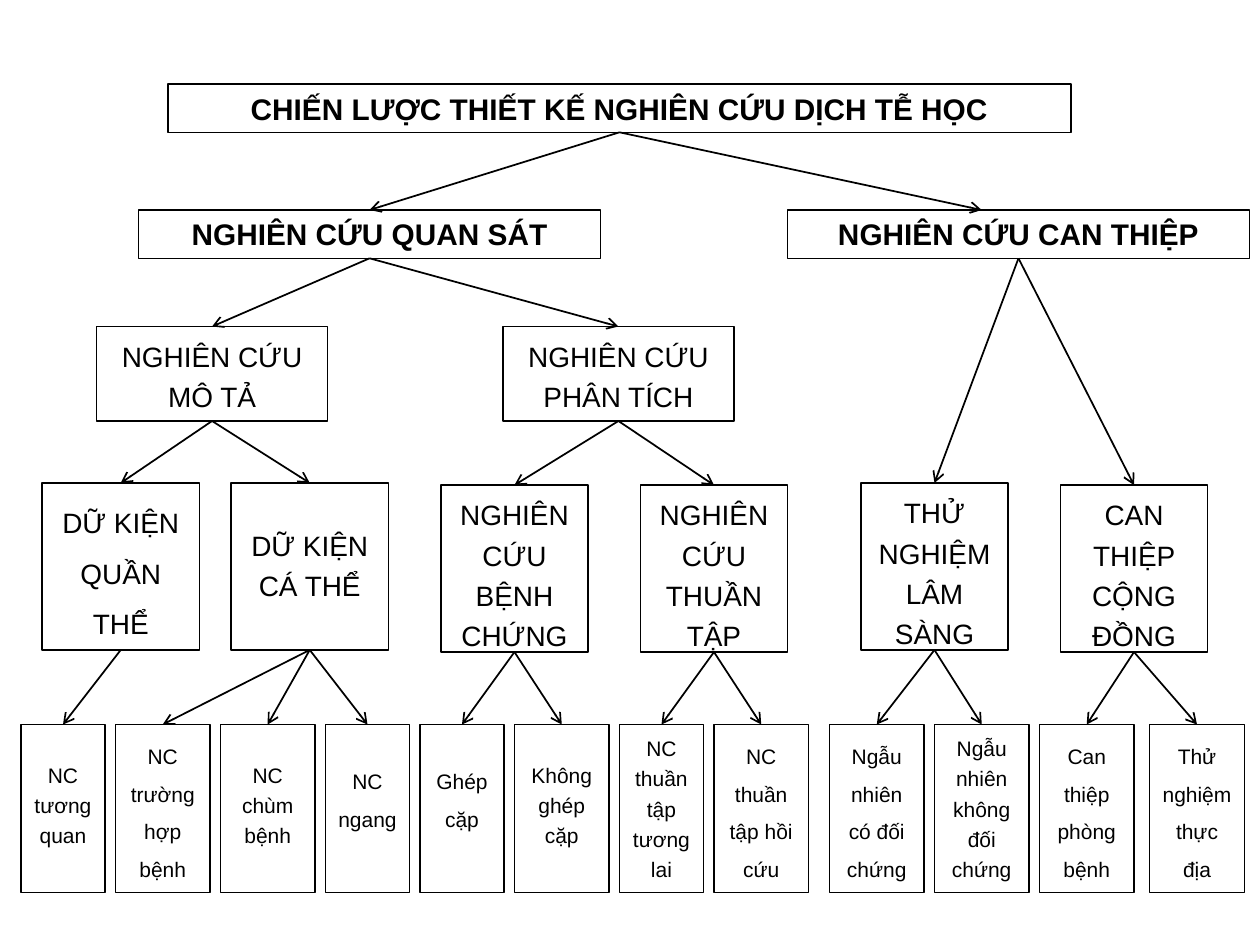
from dataclasses import dataclass
from lxml.etree import SubElement
from pptx import Presentation
from pptx.dml.color import RGBColor
from pptx.enum.shapes import MSO_CONNECTOR, MSO_SHAPE
from pptx.enum.text import MSO_ANCHOR, MSO_AUTO_SIZE, PP_ALIGN
from pptx.oxml.ns import qn
from pptx.util import Inches, Pt


@dataclass(frozen=True)
class Theme:
    ink: RGBColor = RGBColor(0, 0, 0)
    font: str = "Arial"
    head: float = 17
    body: float = 16
    leaf: float = 12
    edge: float = 0.75
    link: float = 1


@dataclass(frozen=True)
class Tier:
    row: float
    tall: float
    size: float
    bold: bool = False


@dataclass(frozen=True)
class Node:
    text: str
    tier: Tier
    col: float
    wide: float
    lead: float = 1.2
    skip: float = 0
    drop: float = 0
    entry: float | None = None
    kids: tuple = ()

    @property
    def mid(self) -> float:
        return self.col + self.wide / 2

    @property
    def top(self) -> float:
        return self.tier.row + self.drop

    @property
    def base(self) -> float:
        return self.top + self.tier.tall


COLS, ROWS = 120, 90
INSET = 0.05
LOOK = Theme()
ROOT = Tier(8, 4.6, LOOK.head, True)
KIND = Tier(20, 4.6, LOOK.head, True)
FORM = Tier(31.1, 9, LOOK.body)
UNIT = Tier(46, 15.9, LOOK.body)
LEAF = Tier(69, 16, LOOK.leaf)

TREE = Node("CHIẾN LƯỢC THIẾT KẾ NGHIÊN CỨU DỊCH TỄ HỌC", ROOT, 16, 86, 1, kids=(
    Node("NGHIÊN CỨU QUAN SÁT", KIND, 13.2, 44, 1, kids=(
        Node("NGHIÊN CỨU MÔ TẢ", FORM, 9.2, 22, kids=(
            Node("DỮ KIỆN QUẦN THỂ", UNIT, 4, 15, 1.5, kids=(
                Node("NC tương quan", LEAF, 2, 8, skip=0.21),)),
            Node("DỮ KIỆN CÁ THỂ", UNIT, 22, 15, skip=0.26, kids=(
                Node("NC trường hợp bệnh", LEAF, 11, 9, 1.5),
                Node("NC chùm bệnh", LEAF, 21, 9, skip=0.21),
                Node("NC ngang", LEAF, 31, 8, 1.5, 0.2))))),
        Node("NGHIÊN CỨU PHÂN TÍCH", FORM, 47.9, 22, kids=(
            Node("NGHIÊN CỨU BỆNH CHỨNG", UNIT, 42, 14, drop=0.2, kids=(
                Node("Ghép cặp", LEAF, 40, 8, 1.5, 0.2),
                Node("Không ghép cặp", LEAF, 49, 9, skip=0.21))),
            Node("NGHIÊN CỨU THUẦN TẬP", UNIT, 61, 14, drop=0.2, kids=(
                Node("NC thuần tập tương lai", LEAF, 59, 8),
                Node("NC thuần tập hồi cứu", LEAF, 68, 9, 1.5))))))),
    Node("NGHIÊN CỨU CAN THIỆP", KIND, 75, 44, 1, entry=93.5, kids=(
        Node("THỬ NGHIỆM LÂM SÀNG", UNIT, 82, 14, kids=(
            Node("Ngẫu nhiên có đối chứng", LEAF, 79, 9, 1.5),
            Node("Ngẫu nhiên không đối chứng", LEAF, 89, 9))),
        Node("CAN THIỆP CỘNG ĐỒNG", UNIT, 101, 14, drop=0.2, kids=(
            Node("Can thiệp phòng bệnh", LEAF, 99, 9, 1.5),
            Node("Thử nghiệm thực địa", LEAF, 109.5, 9, 1.5)))))))

deck = Presentation()
deck.slide_width, deck.slide_height = Inches(10), Inches(7.5)
slide = deck.slides.add_slide(deck.slide_layouts[2])


def across(col: float) -> int:
    return int(deck.slide_width * col / COLS)


def down(row: float) -> int:
    return int(deck.slide_height * row / ROWS)


def apply(item, form: dict) -> None:
    for name, value in form.items():
        setattr(item, name, value)


def draw_box(shape, node: Node) -> None:
    apply(shape, {"left": across(node.col), "top": down(node.top),
                  "width": across(node.wide), "height": down(node.tier.tall)})
    shape.fill.background()
    shape.line.color.rgb = LOOK.ink
    shape.line.width = Pt(LOOK.edge)
    frame = shape.text_frame
    apply(frame, {"text": node.text, "word_wrap": True,
                  "auto_size": MSO_AUTO_SIZE.NONE,
                  "vertical_anchor": MSO_ANCHOR.TOP,
                  "margin_top": Inches(INSET + node.skip)})
    para = frame.paragraphs[0]
    apply(para, {"alignment": PP_ALIGN.CENTER, "line_spacing": node.lead,
                 "space_before": Pt(0)})
    font = para.runs[0].font
    apply(font, {"name": LOOK.font, "size": Pt(node.tier.size),
                 "bold": node.tier.bold})
    font.color.rgb = LOOK.ink


def draw_link(node: Node, kid: Node) -> None:
    end = kid.mid if kid.entry is None else kid.entry
    link = slide.shapes.add_connector(
        MSO_CONNECTOR.STRAIGHT, across(node.mid), down(node.base),
        across(end), down(kid.top))
    link.line.color.rgb = LOOK.ink
    link.line.width = Pt(LOOK.link)
    props = link._element.spPr
    SubElement(props.find(qn("a:ln")), qn("a:tailEnd"), type="arrow")
    SubElement(props, qn("a:effectLst"))


def draw_kids(node: Node) -> None:
    for kid in node.kids:
        shape = slide.shapes.add_shape(MSO_SHAPE.RECTANGLE, 0, 0, 0, 0)
        shape.shadow.inherit = False
        draw_box(shape, kid)
        draw_link(node, kid)
        draw_kids(kid)


title = slide.shapes.title._element
title.getparent().remove(title)
draw_box(slide.placeholders[1], TREE)
draw_kids(TREE)
deck.save("out.pptx")
